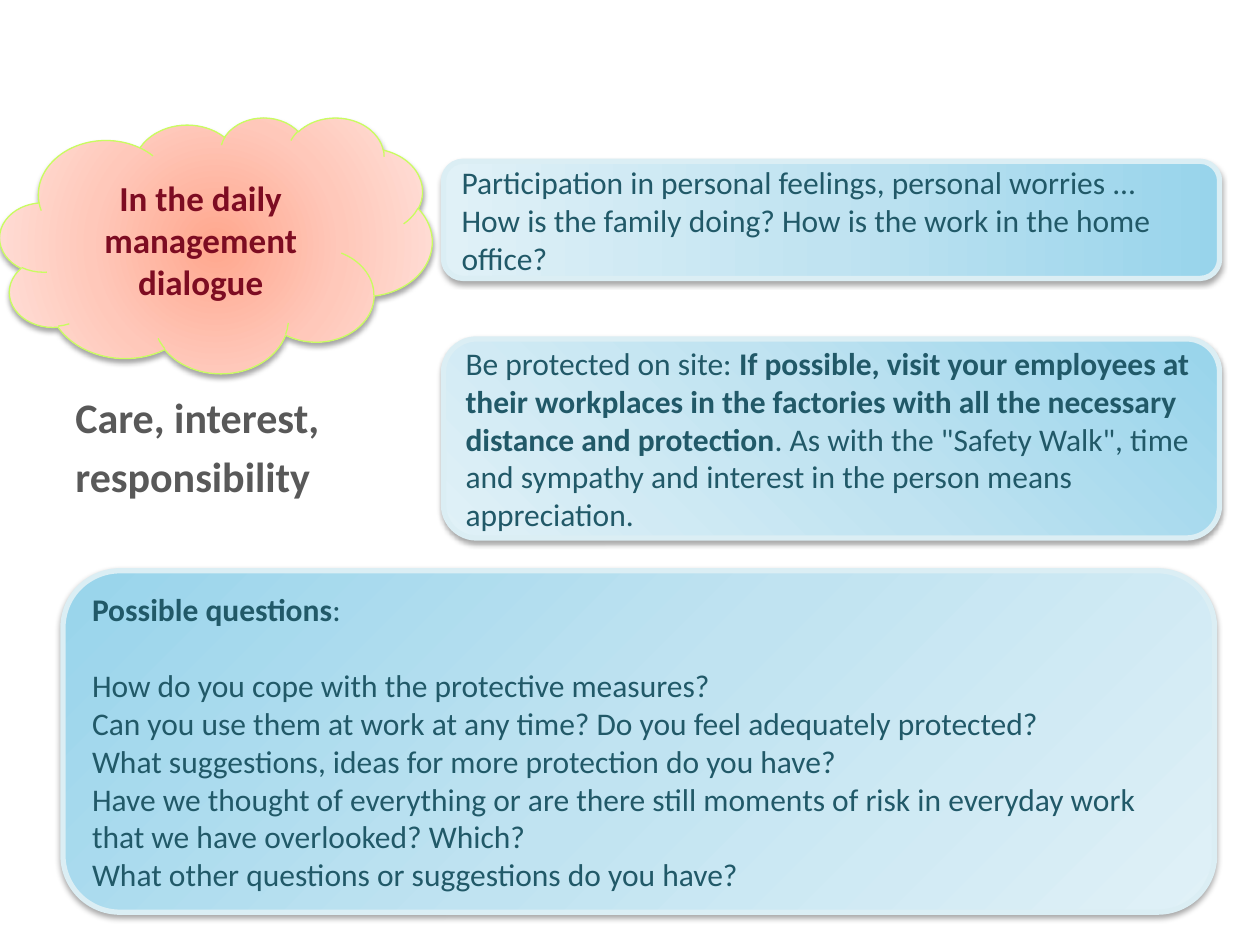
"""Build the slide on care and interest in the daily management dialogue."""
from pptx import Presentation
from pptx import oxml
from pptx import util as u
from pptx.dml.color import RGBColor
from pptx.enum import shapes, text
from pptx.oxml.ns import nsdecls

WIDTH, HEIGHT = 10, 7.5
TEAL = RGBColor(0x21, 0x59, 0x68)
GREY = RGBColor(0x59, 0x59, 0x59)
MAROON = RGBColor(0x7D, 0x0C, 0x22)
PALE_BLUE = RGBColor(0xDB, 0xEE, 0xF4)
LIME = RGBColor(0xC9, 0xFD, 0x60)
BLUES = [RGBColor(0x98, 0xD4, 0xEB), RGBColor(0xC0, 0xE3, 0xF1), RGBColor(0xE0, 0xF1, 0xF7)]
CORALS = [RGBColor(0xFF, 0xA7, 0x8E), RGBColor(0xFF, 0xC8, 0xBA), RGBColor(0xFF, 0xE3, 0xDD)]

LEFTWARD = '<a:lin ang="10800000" scaled="0"/>'


def radial(left, top):
    """Return a circular gradient path centred at the given percentages."""
    return (f'<a:path path="circle"><a:fillToRect l="{left * 1000}" t="{top * 1000}" '
            f'r="{(100 - left) * 1000}" b="{(100 - top) * 1000}"/></a:path>')


class DialogueSlide:
    """Hold the font, the shared look and the current slide."""

    font = "Calibri"

    def __init__(self, deck):
        """Add a blank slide to the deck."""
        self.deck = deck
        self.slide = deck.slides.add_slide(deck.slide_layouts[6])

    def area(self, left, top, width, height):
        """Turn shares of the slide, in percent, into lengths."""
        across, down = self.deck.slide_width / 100, self.deck.slide_height / 100
        return [u.Emu(round(share * side)) for share, side in
                zip((left, top, width, height), (across, down, across, down))]

    def add_text(self, frame, paragraphs, size, color, align=text.PP_ALIGN.LEFT, gaps=None):
        """Fill a frame with paragraphs of (wording, bold) runs, with gaps in points by index."""
        frame.word_wrap = True
        for index, runs in enumerate(paragraphs):
            paragraph = frame.add_paragraph() if index else frame.paragraphs[0]
            paragraph.alignment = align
            if gaps and index in gaps:
                paragraph.space_before = u.Pt(gaps[index])
            for wording, bold in runs:
                run = paragraph.add_run()
                run.text = wording
                run.font.name, run.font.size, run.font.bold = self.font, u.Pt(size), bold
                run.font.color.rgb = color

    def heading(self, place, lines):
        """Add the bold heading, one paragraph a line."""
        box = self.slide.shapes.add_textbox(*self.area(*place))
        self.add_text(box.text_frame, [[(line, True)] for line in lines], 24, GREY,
                      gaps={1: 4.8})

    def bubble(self, kind, place, colors, direction, line_color, line_width):
        """Add a shape with a gradient fill, an outline and a soft shadow."""
        shape = self.slide.shapes.add_shape(kind, *self.area(*place))
        shape.line.color.rgb, shape.line.width = line_color, u.Pt(line_width)
        stops = "".join(f'<a:gs pos="{step * 50000}"><a:srgbClr val="{color}"/></a:gs>'
                        for step, color in enumerate(colors))
        properties = shape._element.spPr
        properties.insert(2, oxml.parse_xml(
            f'<a:gradFill {nsdecls("a")} rotWithShape="1"><a:gsLst>{stops}</a:gsLst>'
            f'{direction}</a:gradFill>'))
        properties.append(oxml.parse_xml(
            f'<a:effectLst {nsdecls("a")}><a:outerShdw blurRad="{u.Pt(3.1)}" '
            f'dist="{u.Pt(1.8)}" dir="5400000" rotWithShape="0"><a:srgbClr val="000000">'
            '<a:alpha val="35000"/></a:srgbClr></a:outerShdw></a:effectLst>'))
        shape.text_frame.vertical_anchor = text.MSO_ANCHOR.MIDDLE
        return shape.text_frame

    def panel(self, place, direction, paragraphs, gaps=None):
        """Add a blue rounded panel of text."""
        frame = self.bubble(shapes.MSO_SHAPE.ROUNDED_RECTANGLE, place, BLUES, direction,
                            PALE_BLUE, 3)
        self.add_text(frame, paragraphs, 18, TEAL, gaps=gaps)

    def cloud(self, place, wording):
        """Add the coral cloud that names the setting."""
        frame = self.bubble(shapes.MSO_SHAPE.CLOUD, place, CORALS, radial(50, 50), LIME, 0.75)
        self.add_text(frame, [[(wording, True)]], 20, MAROON, text.PP_ALIGN.CENTER)


def main():
    """Build and save the deck."""
    deck = Presentation()
    deck.slide_width, deck.slide_height = u.Inches(WIDTH), u.Inches(HEIGHT)
    page = DialogueSlide(deck)
    page.heading((5, 40.8, 28, 14), ["Care, interest,", "responsibility"])
    page.panel((35.2, 17.07, 61.6, 12.4), LEFTWARD, [
        [("Participation in personal feelings, personal worries ... How is the family doing? "
          "How is the work in the home office?", False)]])
    page.panel((35.2, 35.87, 61.6, 21.07), radial(100, 0), [
        [("Be protected on site: ", False),
         ("If possible, visit your employees at their workplaces in the factories with all "
          "the necessary distance and protection", True),
         (". As with the \"Safety Walk\", time and sympathy and interest in the person means "
          "appreciation.", False)]])
    questions = [
        "How do you cope with the protective measures?",
        "Can you use them at work at any time? Do you feel adequately protected?",
        "What suggestions, ideas for more protection do you have?",
        "Have we thought of everything or are there still moments of risk in everyday work "
        "that we have overlooked? Which?",
        "What other questions or suggestions do you have?",
    ]
    page.panel((5, 60.4, 91.4, 36.13), radial(0, 0),
               [[("Possible questions", True), (":", False)]]
               + [[(question, False)] for question in questions], gaps={1: 22})
    page.cloud((0, 12.4, 34.3, 27.07), "In the daily management dialogue")
    deck.save("out.pptx")


if __name__ == "__main__":
    main()
